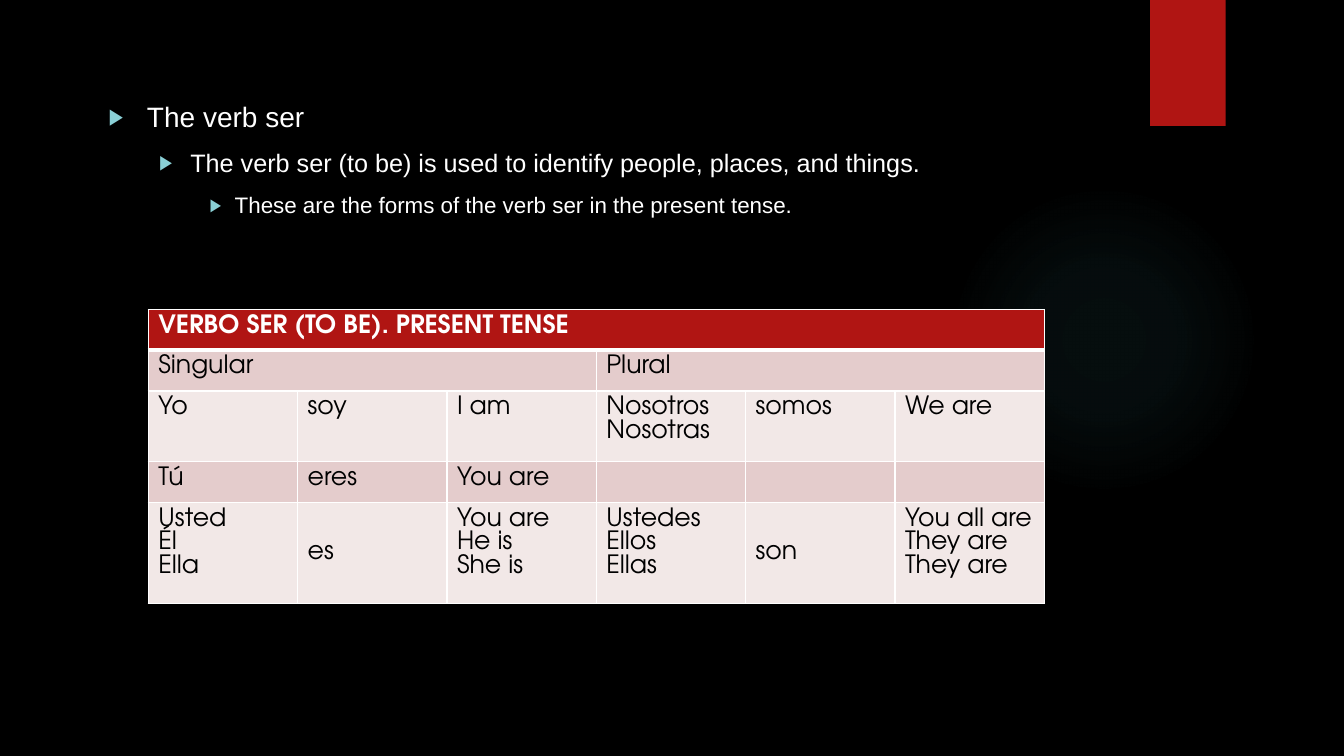
from dataclasses import dataclass
from typing import Optional

from lxml.etree import SubElement
from pptx import Presentation
from pptx.dml.color import RGBColor
from pptx.enum.shapes import MSO_SHAPE as Shape
from pptx.enum.text import MSO_ANCHOR as Anchor
from pptx.oxml import parse_xml
from pptx.oxml.ns import nsdecls, qn
from pptx.util import Inches, Pt

COLORS = {
    "black": "000000", "white": "FFFFFF", "red": "B01513", "glow": "50B9C1",
    "bullet": "8AD0D6", "band": "E4CCCC", "light": "F2E8E7",
}
BODY_FONT, TABLE_FONT = "Arial", "TeX Gyre Adventor"
WIDTH, HEIGHT = Inches(13.33), Inches(7.5)
COLUMNS = 6


@dataclass
class Box:
    left: float
    top: float
    width: float
    height: float

    def place(self) -> tuple:
        return (across(self.left), down(self.top),
                across(self.width), down(self.height))


@dataclass
class Bullet:
    text: str
    size: int
    margin: float
    hanging: float


@dataclass
class Row:
    height: float
    fill: str
    texts: list
    span: int = 1
    color: str = "black"
    bold: bool = False
    top: int = 1
    bottom: int = 1


GLOW = Box(70.58, 24.4, 23.1, 41.07)
RIBBON = Box(85.58, 0, 5.62, 16.67)
BODY = Box(7.35, 12.53, 79.72, 61.2)
TABLE = Box(11.03, 40.93, 66.68, 34.6)

BULLETS = [
    Bullet("The verb ser", 20, 0.38, 0.38),
    Bullet("The verb ser (to be) is used to identify people, places, and things.",
           18, 0.81, 0.31),
    Bullet("These are the forms of the verb ser in the present tense.",
           16, 1.25, 0.25),
]
ROWS = [
    Row(5.4, "red", ["VERBO SER (TO BE). PRESENT TENSE"], span=6,
        color="white", bold=True, bottom=3),
    Row(5.4, "band", ["Singular", "Plural"], span=3, top=3),
    Row(7.6, "light", ["Yo", "soy", "I am", "Nosotros\nNosotras", "somos", "We are"]),
    Row(5.4, "band", ["Tú", "eres", "You are", "", "", ""]),
    Row(10.8, "light", ["Usted\nÉl\nElla", "es", "You are\nHe is\nShe is",
                        "Ustedes\nEllos\nEllas", "son",
                        "You all are\nThey are\nThey are"]),
]
CENTERED = {"es", "son"}


def across(percent: float) -> int:
    return int(WIDTH * percent / 100)


def down(percent: float) -> int:
    return int(HEIGHT * percent / 100)


def rgb(name: str) -> RGBColor:
    return RGBColor.from_string(COLORS[name])


def add_plain(slide, kind, box: Box, fill: Optional[str] = None):
    sp = slide.shapes.add_shape(kind, *box.place())
    sp.shadow.inherit = False
    sp.line.fill.background()
    if fill:
        sp.fill.solid()
        sp.fill.fore_color.rgb = rgb(fill)
    else:
        sp.fill.background()
    return sp


def add_glow(slide) -> None:
    sp = add_plain(slide, Shape.OVAL, GLOW)
    stops = "".join(
        f'<a:gs pos="{pos * 1000}"><a:srgbClr val="{COLORS["glow"]}">'
        f'<a:alpha val="{alpha * 1000}"/></a:srgbClr></a:gs>'
        for pos, alpha in ((0, 7), (36, 6), (69, 0)))
    gradient = parse_xml(
        f'<a:gradFill {nsdecls("a")}><a:gsLst>{stops}</a:gsLst><a:path path="circle">'
        '<a:fillToRect l="50000" t="50000" r="50000" b="50000"/></a:path></a:gradFill>')
    props = sp._element.spPr
    props.replace(props.find(qn("a:noFill")), gradient)


def add_ribbon(slide) -> None:
    sp = add_plain(slide, Shape.RECTANGLE, RIBBON, "red")
    effects = sp._element.spPr.find(qn("a:effectLst"))
    shadow = SubElement(effects, qn("a:outerShdw"), blurRad=str(Pt(3)),
                        dist=str(Pt(2)), dir="5400000", rotWithShape="0")
    color = SubElement(shadow, qn("a:srgbClr"), val=COLORS["black"])
    SubElement(color, qn("a:alpha"), val="45000")


def style_runs(p, font: str, size: int, color: str, bold: bool = False) -> None:
    for r in p.runs:
        r.font.name = font
        r.font.size = Pt(size)
        r.font.bold = bold
        r.font.color.rgb = rgb(color)


def add_bullets(slide) -> None:
    tf = slide.shapes.add_textbox(*BODY.place()).text_frame
    tf.word_wrap = True
    tf.text = "\n".join(b.text for b in BULLETS)
    for level, (p, b) in enumerate(zip(tf.paragraphs, BULLETS)):
        p.level = level
        props = p._p.get_or_add_pPr()
        props.set("marL", str(Inches(b.margin)))
        props.set("indent", str(-Inches(b.hanging)))
        color = SubElement(props, qn("a:buClr"))
        SubElement(color, qn("a:srgbClr"), val=COLORS["bullet"])
        SubElement(props, qn("a:buSzPct"), val="80000")
        SubElement(props, qn("a:buFont"), typeface=BODY_FONT)
        SubElement(props, qn("a:buChar"), char="▶")
        if level:
            p.space_before = Pt(10)
        style_runs(p, BODY_FONT, b.size, "white")


def style_cell(cell, row: Row) -> None:
    cell.fill.solid()
    cell.fill.fore_color.rgb = rgb(row.fill)
    sides = {"lnL": 1, "lnR": 1, "lnT": row.top, "lnB": row.bottom}
    for i, (side, width) in enumerate(sides.items()):
        cell._tc.get_or_add_tcPr().insert(i, parse_xml(
            f'<a:{side} {nsdecls("a")} w="{Pt(width)}"><a:solidFill>'
            f'<a:srgbClr val="{COLORS["white"]}"/></a:solidFill></a:{side}>'))


def add_verb_table(slide) -> None:
    table = slide.shapes.add_table(len(ROWS), COLUMNS, *TABLE.place()).table
    table.first_row = table.horz_banding = False
    for column in table.columns:
        column.width = across(TABLE.width / COLUMNS)
    for i, row in enumerate(ROWS):
        table.rows[i].height = down(row.height)
        for j in range(COLUMNS):
            style_cell(table.cell(i, j), row)
        for n, text in enumerate(row.texts):
            first = n * row.span
            cell = table.cell(i, first)
            if row.span > 1:
                cell.merge(table.cell(i, first + row.span - 1))
            cell.text_frame.text = text
            if text in CENTERED:
                cell.vertical_anchor = Anchor.MIDDLE
            for p in cell.text_frame.paragraphs:
                style_runs(p, TABLE_FONT, 18, row.color, row.bold)


def main() -> None:
    prs = Presentation()
    prs.slide_width, prs.slide_height = WIDTH, HEIGHT
    slide = prs.slides.add_slide(prs.slide_layouts[6])
    slide.background.fill.solid()
    slide.background.fill.fore_color.rgb = rgb("black")
    add_glow(slide)
    add_ribbon(slide)
    add_bullets(slide)
    add_verb_table(slide)
    prs.save("out.pptx")


if __name__ == "__main__":
    main()
